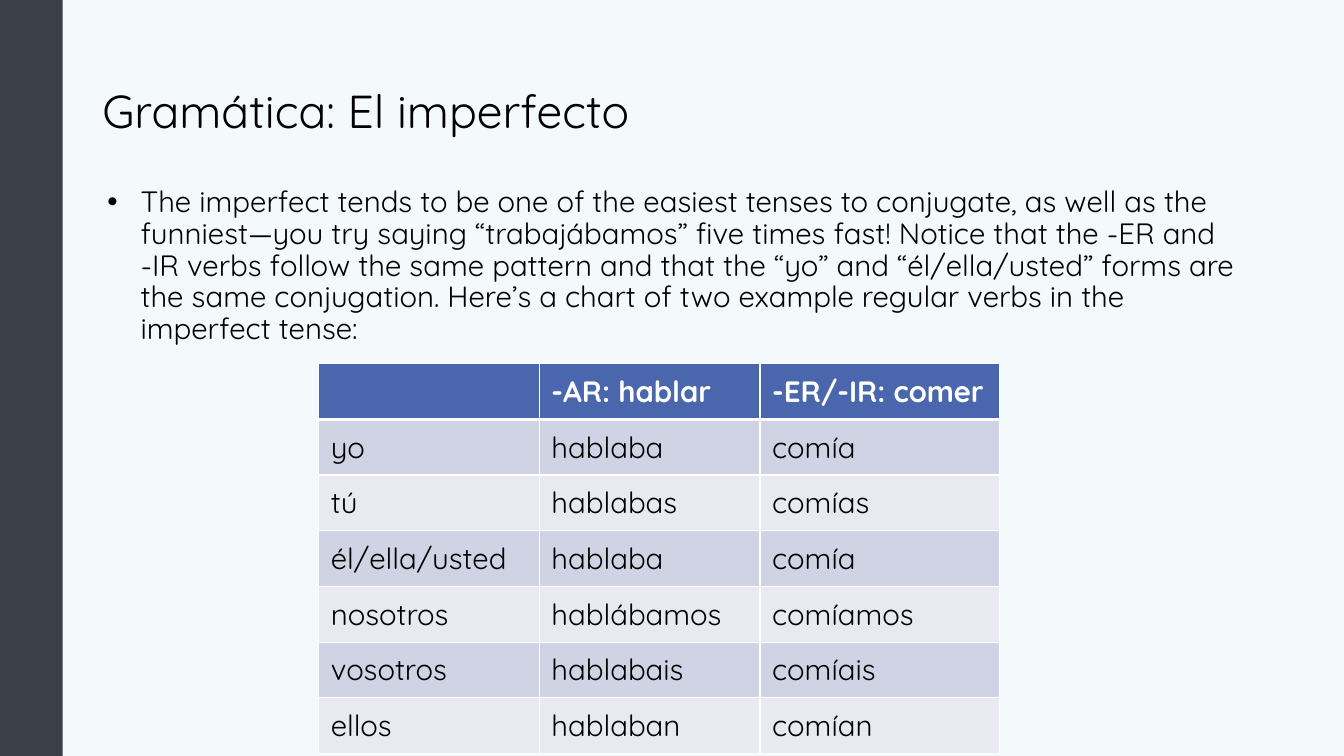
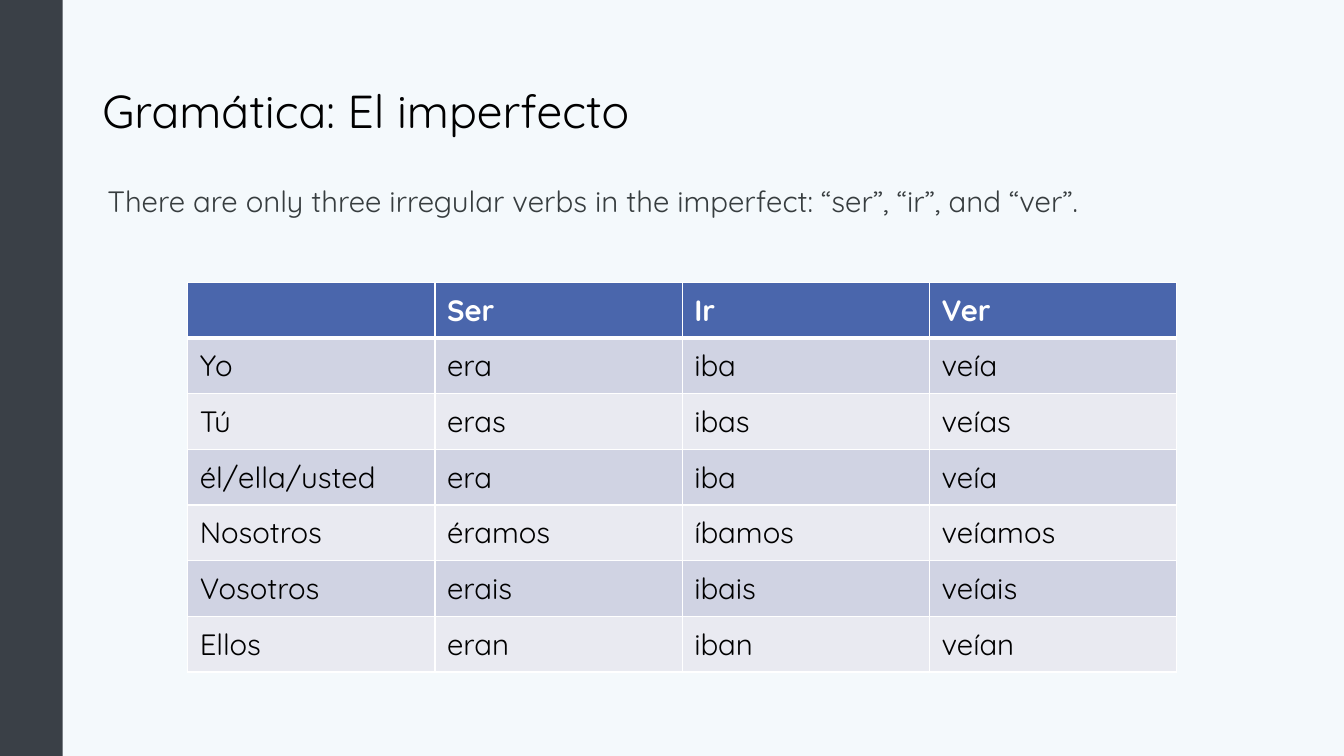
import dataclasses

import pptx
import pptx.dml.color
import pptx.enum.shapes
import pptx.enum.text
import pptx.oxml
import pptx.oxml.ns
import pptx.util


@dataclasses.dataclass(frozen=True)
class Theme:
    font: str = "Quicksand"
    title_size: float = 33
    body_size: float = 21
    page: str = "F4F9FC"
    band: str = "3A4047"
    ink: str = "000000"
    soft_ink: str = "373D3F"
    white: str = "FFFFFF"
    header: str = "4A66AC"
    stripes: tuple = ("D0D3E3", "E9EAF1")
    thin: float = 1
    thick: float = 3


THEME = Theme()
ANCHOR = pptx.enum.text.MSO_ANCHOR

# The slide is a grid of 160 columns by 90 rows, 12 to the inch
COLUMNS, ROWS = 160, 90
UNIT = pptx.util.Inches(1) / 12

# Boxes: left, top, width, height in grid units
BAND = (0, 0, 7.45, ROWS)
TITLE = (11, 4.8, 138, 17.4)
BODY = (11, 21.7, 138, 57.1)
REGULAR_TABLE = (37.95, 43.3, 81, 46.4)
IRREGULAR_TABLE = (22.35, 33.6, 117.75, 46.4)

HEADING = "Gramática: El imperfecto"
REGULAR_TEXT = (
    "The imperfect tends to be one of the easiest tenses to conjugate, as well as "
    "the funniest—you try saying “trabajábamos” five times fast! Notice that the "
    "-ER and -IR verbs follow the same pattern and that the “yo” and "
    "“él/ella/usted” forms are the same conjugation. Here’s a chart of two example "
    "regular verbs in the imperfect tense:"
)
REGULAR_VERBS = [
    ("", "-AR: hablar", "-ER/-IR: comer"),
    ("yo", "hablaba", "comía"),
    ("tú", "hablabas", "comías"),
    ("él/ella/usted", "hablaba", "comía"),
    ("nosotros", "hablábamos", "comíamos"),
    ("vosotros", "hablabais", "comíais"),
    ("ellos", "hablaban", "comían"),
]
IRREGULAR_TEXT = (
    "There are only three irregular verbs in the imperfect: “ser”, “ir”, and “ver”."
)
IRREGULAR_VERBS = [
    ("", "Ser", "Ir", "Ver"),
    ("Yo", "era", "iba", "veía"),
    ("Tú", "eras", "ibas", "veías"),
    ("él/ella/usted", "era", "iba", "veía"),
    ("Nosotros", "éramos", "íbamos", "veíamos"),
    ("Vosotros", "erais", "ibais", "veíais"),
    ("Ellos", "eran", "iban", "veían"),
]


def grid(*lengths):
    return [round(length * UNIT) for length in lengths]


def color(code):
    return pptx.dml.color.RGBColor.from_string(code)


def paint(fill, code):
    fill.solid()
    fill.fore_color.rgb = color(code)


def add_xml(parent, tag, inner="", **attributes):
    listed = "".join(f' {name}="{value}"' for name, value in attributes.items())
    namespace = pptx.oxml.ns.nsdecls("a")
    parent.append(pptx.oxml.parse_xml(f"<a:{tag} {namespace}{listed}>{inner}</a:{tag}>"))


def write(frame, text, size=THEME.body_size, ink=THEME.ink, bold=False,
          line_spacing=None, before=None, hanging=False, bullet=None):
    para = frame.paragraphs[0]
    if line_spacing:
        para.line_spacing = line_spacing
    if before:
        para.space_before = pptx.util.Pt(before)
    properties = para._p.get_or_add_pPr()
    if hanging:
        properties.set("marL", str(pptx.util.Inches(0.38)))
        properties.set("indent", str(pptx.util.Inches(-0.33)))
    if bullet:
        add_xml(properties, "buClr", f'<a:srgbClr val="{ink}"/>')
        add_xml(properties, "buFont", typeface="Arial")
        add_xml(properties, "buChar", char=bullet)
    span = para.add_run()
    span.text = text
    span.font.name = THEME.font
    span.font.size = pptx.util.Pt(size)
    span.font.bold = bold
    span.font.color.rgb = color(ink)


def text_region(page, box, text, anchor=ANCHOR.TOP, **text_format):
    frame = page.shapes.add_textbox(*grid(*box)).text_frame
    frame.word_wrap = True
    frame.vertical_anchor = anchor
    write(frame, text, line_spacing=0.9, **text_format)


def side_band(page, box):
    band = page.shapes.add_shape(pptx.enum.shapes.MSO_SHAPE.RECTANGLE, *grid(*box))
    band.shadow.inherit = False
    paint(band.fill, THEME.band)
    band.line.fill.background()


def cell_borders(cell, top, bottom):
    properties = cell._tc.get_or_add_tcPr()
    sides = {"lnL": THEME.thin, "lnR": THEME.thin, "lnT": top, "lnB": bottom}
    line_fill = f'<a:solidFill><a:srgbClr val="{THEME.white}"/></a:solidFill>'
    for side, width in sides.items():
        add_xml(properties, side, line_fill, w=pptx.util.Pt(width))


def verb_table(page, box, verbs, shares):
    table = page.shapes.add_table(len(verbs), len(shares), *grid(*box)).table
    for column, share in zip(table.columns, shares):
        column.width = grid(box[2] * share / sum(shares))[0]
    for index, forms in enumerate(verbs):
        is_header = index == 0
        table.rows[index].height = grid(box[3] / len(verbs))[0]
        for position, form in enumerate(forms):
            cell = table.cell(index, position)
            cell.vertical_anchor = ANCHOR.MIDDLE
            cell.margin_left = cell.margin_right = pptx.util.Inches(0.12)
            cell.margin_top = cell.margin_bottom = pptx.util.Inches(0.09)
            cell_borders(cell, top=THEME.thick if index == 1 else THEME.thin,
                         bottom=THEME.thick if is_header else THEME.thin)
            paint(cell.fill, THEME.header if is_header else THEME.stripes[(index - 1) % 2])
            if form:
                write(cell.text_frame, form, bold=is_header,
                      ink=THEME.white if is_header else THEME.ink)


def grammar_slide(deck, text, table_box, verbs, shares, **text_format):
    page = deck.slides.add_slide(deck.slide_layouts[6])
    side_band(page, BAND)
    text_region(page, TITLE, HEADING, anchor=ANCHOR.MIDDLE, size=THEME.title_size)
    text_region(page, BODY, text, before=7.5, hanging=True, **text_format)
    verb_table(page, table_box, verbs, shares)


def main():
    deck = pptx.Presentation()
    deck.slide_width, deck.slide_height = grid(COLUMNS, ROWS)
    paint(deck.slide_master.background.fill, THEME.page)

    # Regular verbs
    grammar_slide(deck, REGULAR_TEXT, REGULAR_TABLE, REGULAR_VERBS, (12, 12, 13), bullet="•")
    # Irregular verbs
    grammar_slide(deck, IRREGULAR_TEXT, IRREGULAR_TABLE, IRREGULAR_VERBS, (1, 1, 1, 1),
                  ink=THEME.soft_ink)

    deck.save("out.pptx")


if __name__ == "__main__":
    main()
